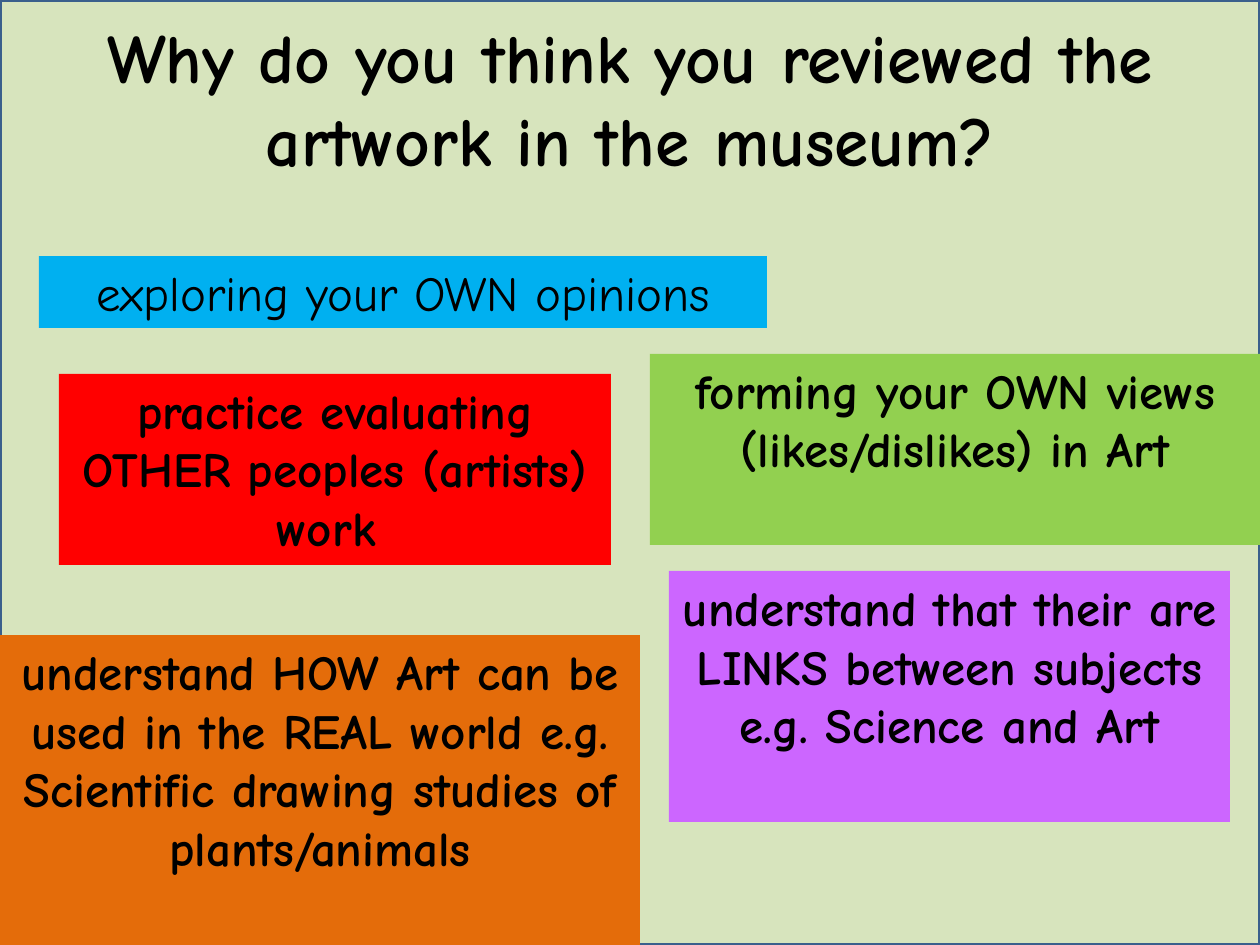
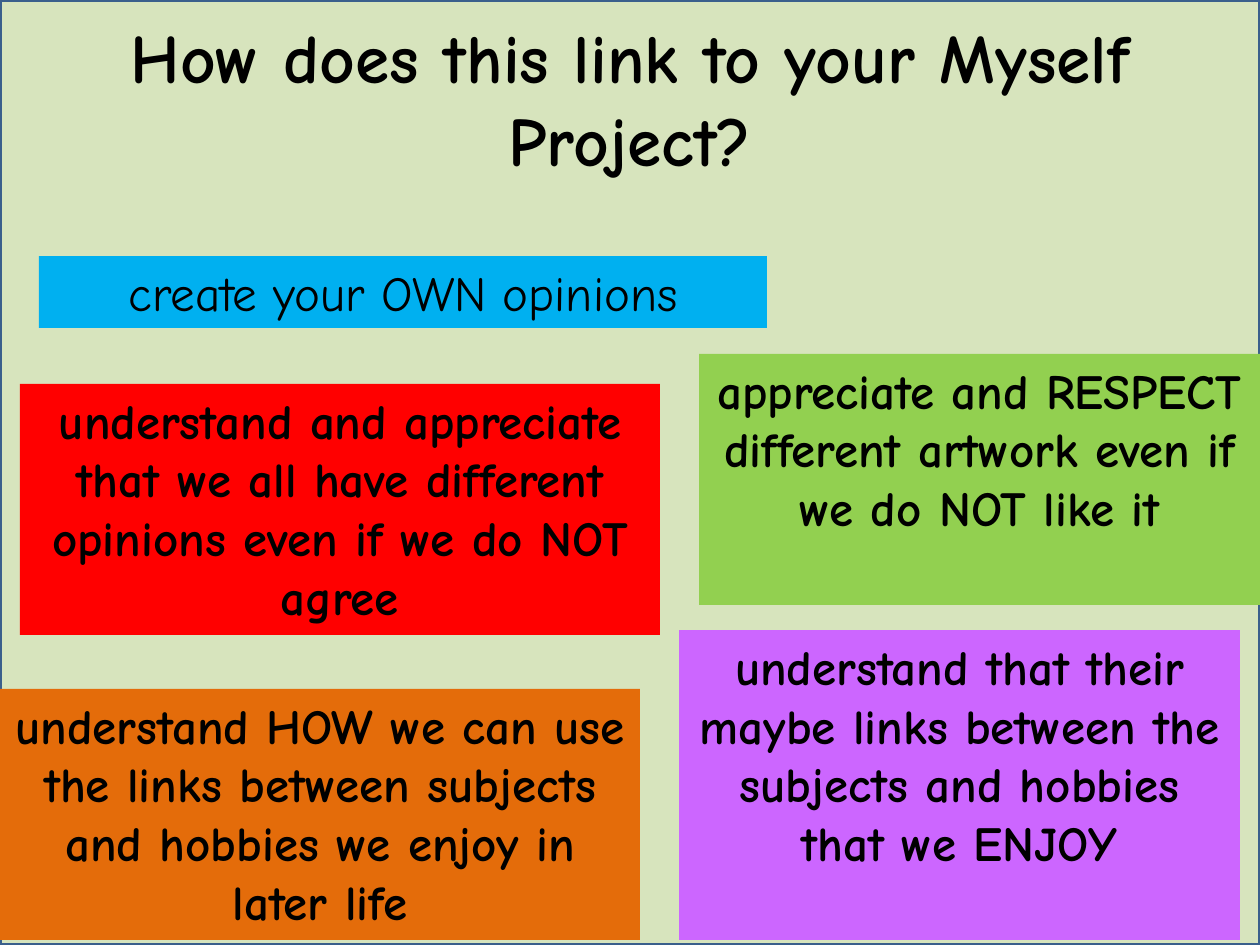
from pptx import Presentation
from pptx.dml.color import RGBColor
from pptx.enum.shapes import MSO_SHAPE
from pptx.enum.text import MSO_ANCHOR, MSO_AUTO_SIZE, PP_ALIGN
from pptx.util import Emu, Pt

RECTANGLE = MSO_SHAPE.RECTANGLE
CENTER = PP_ALIGN.CENTER
TOP, MIDDLE = MSO_ANCHOR.TOP, MSO_ANCHOR.MIDDLE
NO_AUTOFIT = MSO_AUTO_SIZE.NONE

# Shared style
PX = 914400 / 126
PAGE_WIDTH, PAGE_HEIGHT = 1260, 945
TITLE_HEIGHT = 195
TITLE_ONLY_LAYOUT = 5
FONT = "Comic Neue"
TITLE_SIZE, ANSWER_SIZE = 39.6, 28
BLACK = "000000"
PANEL, PANEL_EDGE = "D7E4BD", "3A5F8C"
GREEN, RED, BLUE = "92D050", "FF0000", "00B0F0"
PURPLE, ORANGE = "CC66FF", "E46C0A"
OPINION_PLACE = (39, 256, 728, 72)

# Each slide: question, then answers as (text, colour, place, bold)
SLIDES = [
    ("Why do you think you reviewed the artwork in the museum?", [
        ("forming your OWN views (likes/dislikes) in Art",
         GREEN, (650, 354, 610, 191), True),
        ("practice evaluating OTHER peoples (artists) work ",
         RED, (59, 374, 552, 191), True),
        ("exploring your OWN opinions", BLUE, OPINION_PLACE, False),
        ("understand that their are LINKS between subjects "
         "e.g. Science and Art",
         PURPLE, (669, 571, 561, 251), True),
        ("understand HOW Art can be used in the REAL world e.g. "
         "Scientific drawing studies of plants/animals",
         ORANGE, (0, 635, 640, 310), True),
    ]),
    ("How does this link to your Myself Project?", [
        ("appreciate and RESPECT different artwork even if we do NOT like it",
         GREEN, (699, 354, 561, 251), True),
        ("understand and appreciate that we all have different opinions "
         "even if we do NOT agree",
         RED, (20, 384, 640, 251), True),
        ("create your OWN opinions", BLUE, OPINION_PLACE, False),
        ("understand that their maybe links between the subjects and "
         "hobbies that we ENJOY",
         PURPLE, (679, 630, 561, 310), True),
        ("understand HOW we can use the links between subjects and "
         "hobbies we enjoy in later life",
         ORANGE, (0, 689, 640, 251), True),
    ]),
]


def px(length):
    return Emu(round(length * PX))


def color(hex_string):
    return RGBColor.from_string(hex_string)


def write_text(shape, text, size, bold, anchor):
    frame = shape.text_frame
    frame.word_wrap = True
    frame.auto_size = NO_AUTOFIT
    frame.vertical_anchor = anchor
    para = frame.paragraphs[0]
    para.text = text
    para.alignment = CENTER
    font = para.font
    font.name, font.size, font.bold = FONT, Pt(size), bold
    font.color.rgb = color(BLACK)


def add_rectangle(page, place, fill):
    box = page.shapes.add_shape(RECTANGLE, *map(px, place))
    box.shadow.inherit = False
    box.fill.solid()
    box.fill.fore_color.rgb = color(fill)
    box.line.fill.background()
    return box


def add_panel(page):
    panel = add_rectangle(page, (0, 0, PAGE_WIDTH, PAGE_HEIGHT), PANEL)
    panel.line.color.rgb = color(PANEL_EDGE)
    panel.line.width = Pt(2)
    # Send the panel behind the title
    page.shapes.title._element.addprevious(panel._element)


def set_title(page, text):
    title = page.shapes.title
    title.left, title.top = px(0), px(0)
    title.width, title.height = px(PAGE_WIDTH), px(TITLE_HEIGHT)
    write_text(title, text, TITLE_SIZE, True, MIDDLE)


def add_answer(page, text, fill, place, bold):
    box = add_rectangle(page, place, fill)
    write_text(box, text, ANSWER_SIZE, bold, TOP)


def main():
    deck = Presentation()
    deck.slide_width, deck.slide_height = px(PAGE_WIDTH), px(PAGE_HEIGHT)
    for question, answers in SLIDES:
        page = deck.slides.add_slide(deck.slide_layouts[TITLE_ONLY_LAYOUT])
        add_panel(page)
        set_title(page, question)
        for answer in answers:
            add_answer(page, *answer)
    deck.save("out.pptx")


if __name__ == "__main__":
    main()
